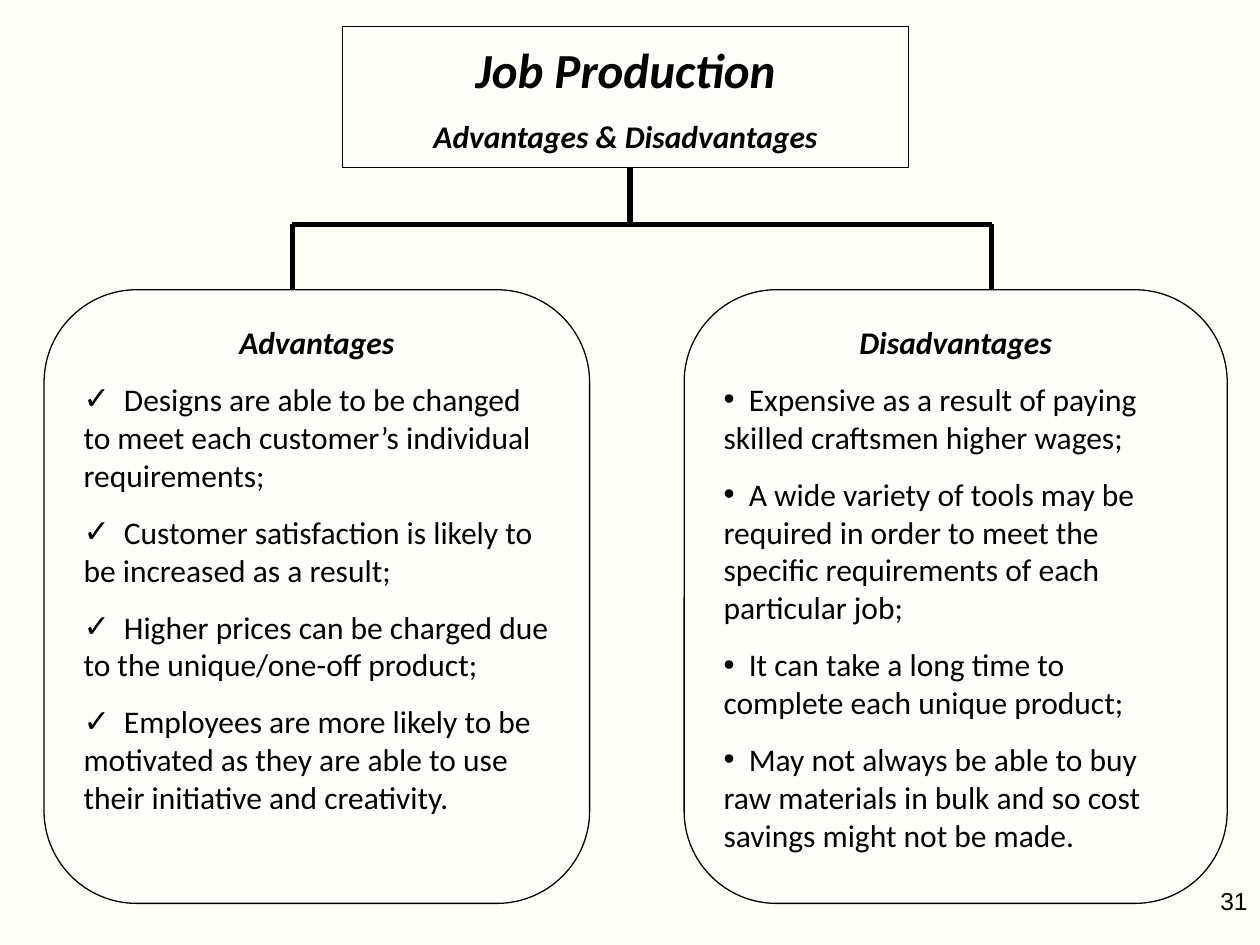
from typing import NamedTuple

from lxml.etree import SubElement
from pptx import Presentation
from pptx.dml.color import RGBColor
from pptx.enum.shapes import MSO_CONNECTOR, MSO_SHAPE
from pptx.enum.text import MSO_ANCHOR, MSO_AUTO_SIZE, PP_ALIGN
from pptx.oxml.ns import qn
from pptx.util import Inches, Pt

BLACK = RGBColor(0x00, 0x00, 0x00)
PAGE = RGBColor(0xFF, 0xFF, 0xF7)
PANEL_FILL = RGBColor(0xFF, 0xFF, 0xFA)

WIDTH, HEIGHT = Inches(10), Inches(7.5)
COLUMNS, ROWS = 100, 75
BODY_SIZE = 18
PARAGRAPH_GAP = Pt(11)
PANEL_TOP, PANEL_ROWS = 23, 48.7
TITLE_BOTTOM, BRANCH_ROW = 13.3, 17.8


class Panel(NamedTuple):
    heading: str
    left: float
    columns: float
    stem: float
    bullet: str
    text_start: float
    points: tuple[str, ...]


PANELS = (
    Panel("Advantages", 3.5, 43.3, 23.2, "✓", 3.2, (
        "Designs are able to be changed to meet each customer’s individual requirements;",
        "Customer satisfaction is likely to be increased as a result;",
        "Higher prices can be charged due to the unique/one-off product;",
        "Employees are more likely to be motivated as they are able to use "
        "their initiative and creativity.",
    )),
    Panel("Disadvantages", 54.3, 43.1, 78.7, "•", 2, (
        "Expensive as a result of paying skilled craftsmen higher wages;",
        "A wide variety of tools may be required in order to meet the specific "
        "requirements of each particular job;",
        "It can take a long time to complete each unique product;",
        "May not always be able to buy raw materials in bulk and so cost "
        "savings might not be made.",
    )),
)


def across(columns: float) -> int:
    return round(WIDTH * columns / COLUMNS)


def down(rows: float) -> int:
    return round(HEIGHT * rows / ROWS)


def place(shape, left: float, top: float, columns: float, rows: float) -> None:
    shape.left, shape.top = across(left), down(top)
    shape.width, shape.height = across(columns), down(rows)


def outline(shape) -> None:
    shape.fill.solid()
    shape.fill.fore_color.rgb = PANEL_FILL
    shape.line.color.rgb = BLACK
    shape.line.width = Pt(0.75)


def add_text(paragraph, text: str, size: float, align=PP_ALIGN.LEFT,
             strong: bool = False, typeface: str = "Calibri") -> None:
    paragraph.alignment = align
    run = paragraph.add_run()
    run.text = text
    font = run.font
    font.name, font.size = typeface, Pt(size)
    font.bold = font.italic = strong
    font.color.rgb = BLACK


def add_bullet(paragraph, mark: str, text_start: float) -> None:
    """Start the paragraph with a mark, and its first line at a tab stop."""
    properties = paragraph._p.get_or_add_pPr()
    properties.set("marL", "0")
    properties.set("indent", "0")
    SubElement(properties, qn("a:buFont"), typeface="Arial")
    SubElement(properties, qn("a:buChar"), char=mark)
    stops = SubElement(properties, qn("a:tabLst"))
    SubElement(stops, qn("a:tab"), pos=str(across(text_start)), algn="l")


def add_branch(slide, x1: float, y1: float, x2: float, y2: float) -> None:
    branch = slide.shapes.add_connector(
        MSO_CONNECTOR.STRAIGHT, across(x1), down(y1), across(x2), down(y2))
    branch.line.color.rgb = BLACK
    branch.line.width = Pt(3)
    SubElement(branch._element.spPr, qn("a:effectLst"))


def add_title(slide) -> None:
    title = slide.shapes.title
    place(title, 27.2, 2.1, 44.9, 11.2)
    outline(title)
    frame = title.text_frame
    frame.word_wrap = True
    frame.auto_size = MSO_AUTO_SIZE.NONE
    frame.vertical_anchor = MSO_ANCHOR.MIDDLE
    add_text(frame.paragraphs[0], "Job Production", 28, PP_ALIGN.CENTER, True)
    subtitle = frame.add_paragraph()
    subtitle.space_before = PARAGRAPH_GAP
    add_text(subtitle, "Advantages & Disadvantages", BODY_SIZE, PP_ALIGN.CENTER, True)


def add_panel(slide, panel: Panel) -> None:
    add_branch(slide, panel.stem, BRANCH_ROW, panel.stem, PANEL_TOP)
    box = slide.shapes.add_shape(MSO_SHAPE.ROUNDED_RECTANGLE, 0, 0, 0, 0)
    place(box, panel.left, PANEL_TOP, panel.columns, PANEL_ROWS)
    box.adjustments[0] = 0.17
    box.shadow.inherit = False
    outline(box)
    frame = box.text_frame
    frame.word_wrap = True
    frame.vertical_anchor = MSO_ANCHOR.TOP
    add_text(frame.paragraphs[0], panel.heading, BODY_SIZE, PP_ALIGN.CENTER, True)
    for point in panel.points:
        paragraph = frame.add_paragraph()
        add_bullet(paragraph, panel.bullet, panel.text_start)
        paragraph.space_before = PARAGRAPH_GAP
        add_text(paragraph, "\t" + point, BODY_SIZE)


def add_page_number(slide) -> None:
    number = slide.shapes.add_textbox(0, 0, 0, 0)
    place(number, 76.7, 69.8, 23.3, 5.2)
    number.text_frame.word_wrap = True
    add_text(number.text_frame.paragraphs[0], "31", 14, PP_ALIGN.RIGHT, typeface="Arial")


def main() -> None:
    deck = Presentation()
    deck.slide_width, deck.slide_height = WIDTH, HEIGHT
    slide = deck.slides.add_slide(deck.slide_layouts.get_by_name("Title Only"))
    slide.background.fill.solid()
    slide.background.fill.fore_color.rgb = PAGE

    add_title(slide)
    add_page_number(slide)
    add_branch(slide, 50, TITLE_BOTTOM, 50, BRANCH_ROW)
    add_branch(slide, PANELS[0].stem, BRANCH_ROW, PANELS[1].stem, BRANCH_ROW)
    for panel in PANELS:
        add_panel(slide, panel)
    deck.save("out.pptx")


if __name__ == "__main__":
    main()
